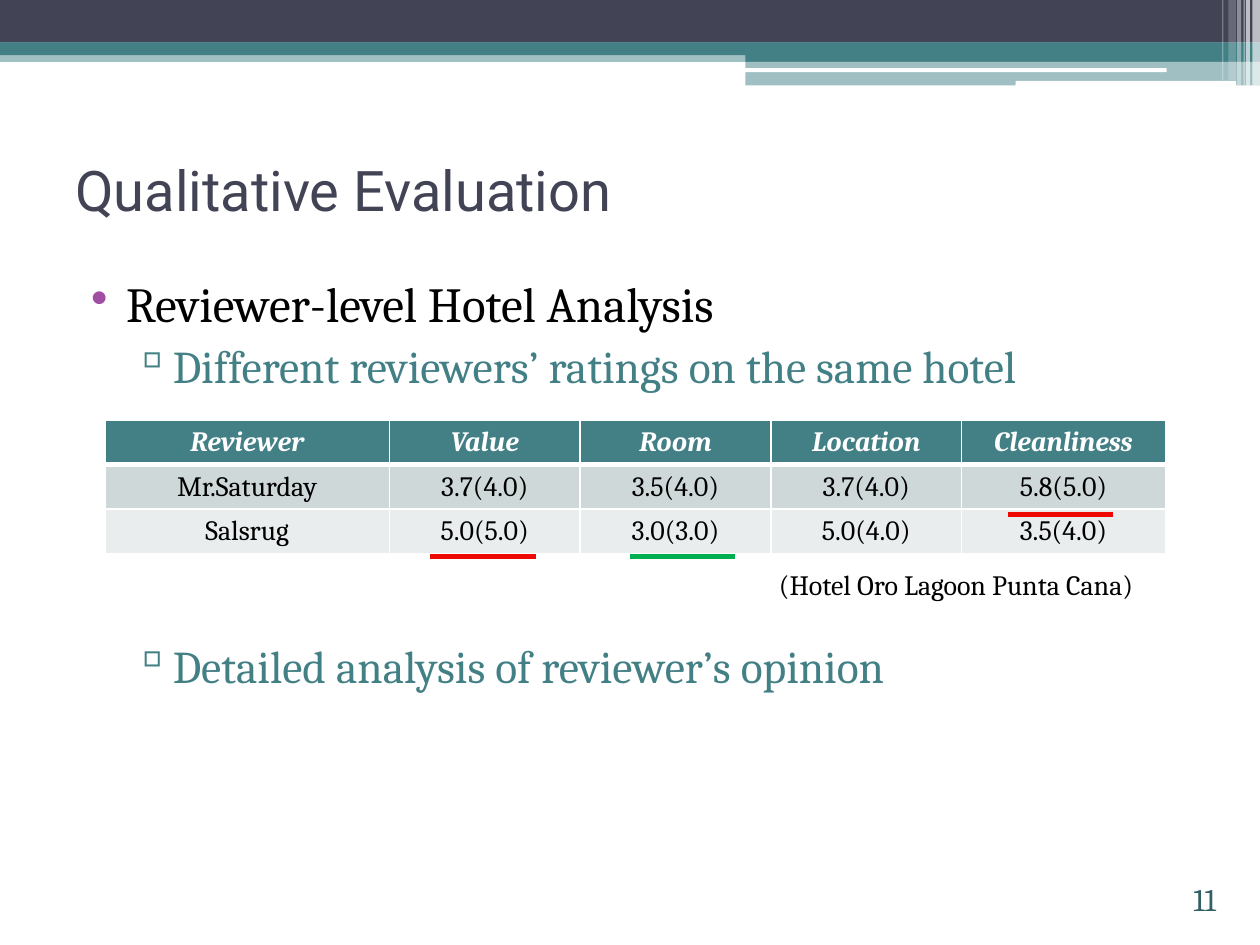
from lxml import etree
from pptx import Presentation
from pptx.dml.color import RGBColor
from pptx.enum.shapes import MSO_CONNECTOR, MSO_SHAPE
from pptx.enum.text import MSO_ANCHOR, PP_ALIGN
from pptx.oxml.ns import qn
from pptx.util import Pt

RECT = MSO_SHAPE.RECTANGLE
ROUNDED = MSO_SHAPE.ROUNDED_RECTANGLE
STRAIGHT = MSO_CONNECTOR.STRAIGHT
TOP, MIDDLE, BOTTOM = MSO_ANCHOR.TOP, MSO_ANCHOR.MIDDLE, MSO_ANCHOR.BOTTOM
LEFT, CENTER, RIGHT = PP_ALIGN.LEFT, PP_ALIGN.CENTER, PP_ALIGN.RIGHT

COLORS = {
    "white": "FFFFFF", "black": "000000", "navy": "424456", "teal": "438086",
    "dark teal": "326065", "purple": "A04DA3", "red": "EE0802",
    "green": "00B050", "band 1": "CFD8D9", "band 2": "E9EDED",
}


def rgb(name):
    return RGBColor.from_string(COLORS[name])


class SlideBuilder:
    heading_font = "Roboto"
    body_font = "Cambria"

    def __init__(self, page):
        self.page = page

    def style(self, para, size, color, font=None, bold=False, italic=False):
        for span in para.runs:
            span.font.name = font or self.body_font
            span.font.size = Pt(size)
            span.font.bold = bold
            span.font.italic = italic
            span.font.color.rgb = rgb(color)

    def bar(self, left, top, width, height, color, opacity=100, kind=RECT):
        bar = self.page.shapes.add_shape(kind, Pt(left), Pt(top), Pt(width), Pt(height))
        bar.shadow.inherit = False
        bar.fill.solid()
        bar.fill.fore_color.rgb = rgb(color)
        bar.line.fill.background()
        if opacity < 100:
            fill_color = bar.fill._xPr.find(qn("a:solidFill"))[0]
            etree.SubElement(fill_color, qn("a:alpha"), val=str(opacity * 1000))

    def box(self, left, top, width, height, anchor=TOP):
        box = self.page.shapes.add_textbox(Pt(left), Pt(top), Pt(width), Pt(height))
        box.text_frame.word_wrap = True
        box.text_frame.vertical_anchor = anchor
        return box.text_frame

    def label(self, text, place, size, color, font=None, anchor=TOP, align=LEFT):
        frame = self.box(*place, anchor)
        frame.text = text
        para = frame.paragraphs[0]
        para.alignment = align
        self.style(para, size, color, font)

    def bullets(self, place, items):
        frame = self.box(*place)
        for index, (text, level, before) in enumerate(items):
            para = frame.add_paragraph() if index else frame.paragraphs[0]
            para.text = text
            para.level = level
            para.space_before = Pt(before)
            margin, hanging, mark, mark_color, size, color = (
                (52, 19.5, "▫", "teal", 26, "teal") if level
                else (29, 20, "•", "purple", 28, "black"))
            props = para._p.get_or_add_pPr()
            props.set("marL", str(Pt(margin)))
            props.set("indent", str(-Pt(hanging)))
            bullet_color = etree.SubElement(props, qn("a:buClr"))
            etree.SubElement(bullet_color, qn("a:srgbClr"), val=COLORS[mark_color])
            etree.SubElement(props, qn("a:buChar"), char=mark)
            self.style(para, size, color)

    def border(self, cell, edge, width):
        line = etree.SubElement(cell._tc.get_or_add_tcPr(), qn("a:ln" + edge), w=str(Pt(width)))
        fill = etree.SubElement(line, qn("a:solidFill"))
        etree.SubElement(fill, qn("a:srgbClr"), val=COLORS["white"])

    def table(self, left, top, widths, row_height, rows):
        table = self.page.shapes.add_table(
            len(rows), len(widths), Pt(left), Pt(top),
            Pt(sum(widths)), Pt(row_height * len(rows))).table
        for column, width in zip(table.columns, widths):
            column.width = Pt(width)
        for r, values in enumerate(rows):
            table.rows[r].height = Pt(row_height)
            header = r == 0
            for c, value in enumerate(values):
                cell = table.cell(r, c)
                cell.text = value
                cell.vertical_anchor = MIDDLE
                cell.margin_top = cell.margin_bottom = Pt(3)
                edges = {"L": 1, "R": 1, "T": 3 if r == 1 else 1, "B": 3 if header else 1}
                for edge, width in edges.items():
                    self.border(cell, edge, width)
                cell.fill.solid()
                cell.fill.fore_color.rgb = rgb("teal" if header else f"band {r}")
                para = cell.text_frame.paragraphs[0]
                para.alignment = CENTER
                self.style(para, 16, "white" if header else "black",
                           bold=header, italic=header)

    def underline(self, left, top, color):
        line = self.page.shapes.add_connector(
            STRAIGHT, Pt(left), Pt(top), Pt(left + 60), Pt(top))
        line.line.color.rgb = rgb(color)
        line.line.width = Pt(3)
        etree.SubElement(line._element.spPr, qn("a:effectLst"))


def main():
    deck = Presentation()
    deck.slide_width, deck.slide_height = Pt(720), Pt(540)
    builder = SlideBuilder(deck.slides.add_slide(deck.slide_layouts[6]))

    # Banner across the top
    builder.bar(0, 28.8, 720, 6.6, "teal", 50)
    builder.bar(0, 0, 720, 24.4, "navy")
    builder.bar(0, 24.3, 720, 7.2, "teal")
    builder.bar(426, 28, 294, 7.2, "teal")
    builder.bar(426, 34.8, 294, 14, "teal", 50)
    builder.bar(425.5, 39, 241.2, 2.2, "white", kind=ROUNDED)
    builder.bar(580.3, 46.2, 126, 2.8, "white", kind=ROUNDED)

    # Pale stripes at the right end of the banner
    for left, width, height, opacity in [
            (715.7, 4.3, 49, 65), (712, 2.2, 49, 65), (710.6, 0.7, 49, 60),
            (707, 2.2, 49, 40), (702, 4.3, 46, 20), (698.4, 0.7, 46, 30)]:
        builder.bar(left, 0, width, height, "white", opacity)

    # Title and bullets
    builder.label("Qualitative Evaluation", (36, 66, 648, 84), 32, "navy",
                  builder.heading_font, MIDDLE)
    builder.bullets((36, 153, 648, 369), [
        ("Reviewer-level Hotel Analysis", 0, 0),
        ("Different reviewers’ ratings on the same hotel", 1, 3),
        ("Detailed analysis of reviewer’s opinion", 1, 140),
    ])

    # Page number
    builder.label("11", (642, 499, 60, 29), 18, "dark teal", anchor=BOTTOM, align=RIGHT)

    # Ratings table and its caption
    builder.table(60, 240, [162.5, 109, 109, 109, 116.5], 25.5, [
        ["Reviewer", "Value", "Room", "Location", "Cleanliness"],
        ["Mr.Saturday", "3.7(4.0)", "3.5(4.0)", "3.7(4.0)", "5.8(5.0)"],
        ["Salsrug", "5.0(5.0)", "3.0(3.0)", "5.0(4.0)", "3.5(4.0)"],
    ])
    builder.label("(Hotel Oro Lagoon Punta Cana)", (438, 321, 234, 27), 16, "black")

    # Marks under the notable ratings
    for left, top, color in [(360, 318, "green"), (576, 294, "red"), (246, 318, "red")]:
        builder.underline(left, top, color)

    deck.save("out.pptx")


if __name__ == "__main__":
    main()
